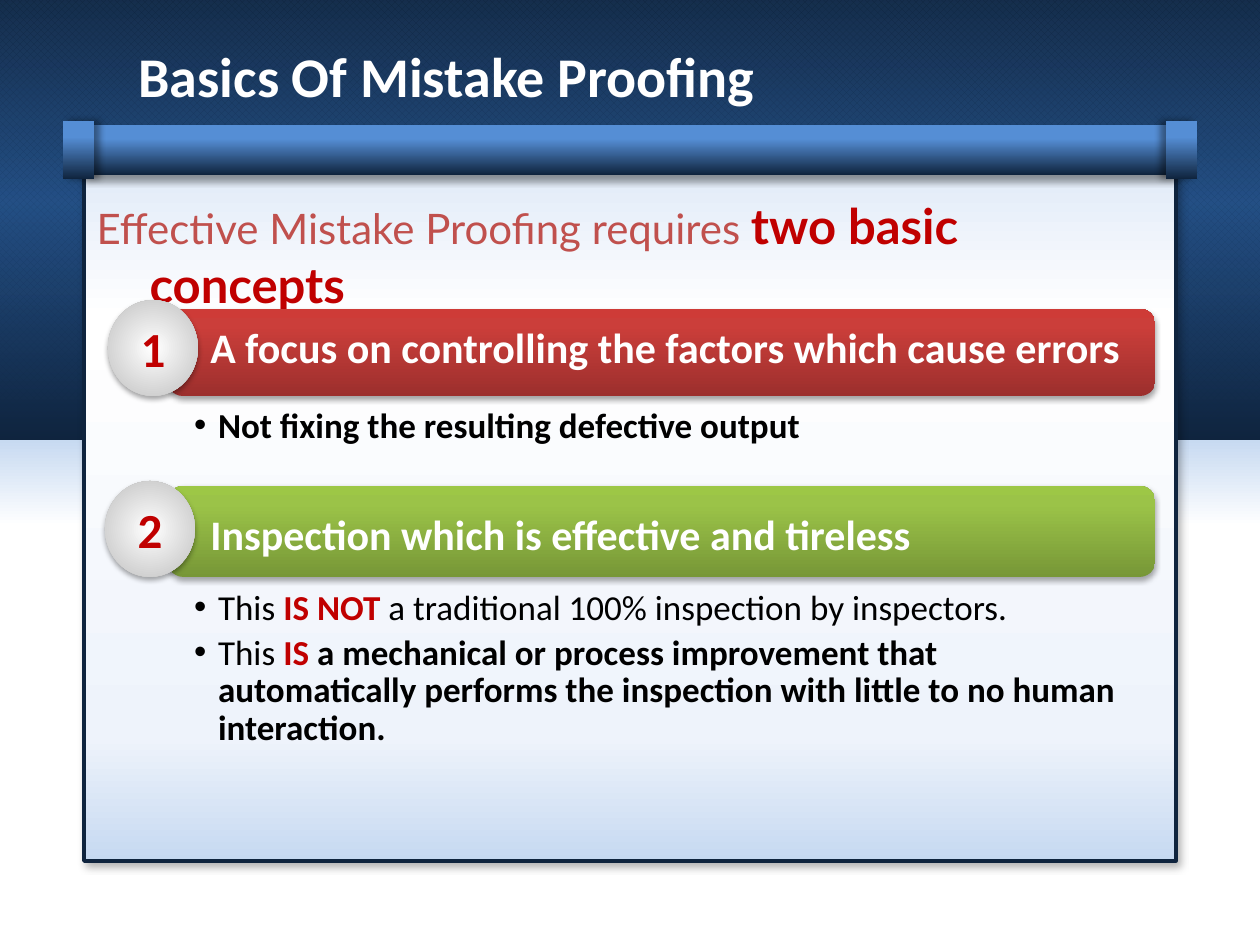
from dataclasses import dataclass
from typing import Optional

from lxml import etree
from pptx import Presentation
from pptx import util as u
from pptx.dml import color
from pptx.enum import shapes, text
from pptx.oxml import ns

EMU_PER_PX = 914400 / 126
COLORS = {
    "white": "FFFFFF", "black": "000000", "navy": "0F243E", "blue": "1F497D",
    "sky": "558ED5", "pale": "8EB4E3", "mist": "DAE6F6", "haze": "EEF3FB",
    "ice": "C6D9F1", "silver": "BFBFBF", "rose": "C0504D", "red": "C00000",
    "red_dark": "9C2F2D", "red_mid": "CB3E3A", "red_light": "CE3B37",
    "green_dark": "779737", "green_mid": "9BC348", "green_light": "9DC746",
}


@dataclass(frozen=True)
class Box:
    x: int
    y: int
    w: int
    h: int

    def emu(self) -> list[int]:
        return [px(v) for v in (self.x, self.y, self.w, self.h)]


@dataclass(frozen=True)
class Stop:
    at: int
    color: str
    alpha: int = 100


@dataclass(frozen=True)
class Shadow:
    alpha: int
    blur: float
    dist: float
    angle: int


@dataclass(frozen=True)
class Panel:
    box: Box
    stops: list[Stop]
    shadow: Optional[Shadow] = None
    kind: shapes.MSO_SHAPE = shapes.MSO_SHAPE.RECTANGLE
    angle: Optional[int] = 90


@dataclass(frozen=True)
class Span:
    text: str
    color: str = "black"
    bold: bool = False
    size: int = 20


@dataclass(frozen=True)
class Concept:
    number: str
    heading: str
    banner: Box
    badge: Box
    label: Box
    stops: list[Stop]
    points_idx: int
    points_box: Box
    points: list[list[Span]]


def px(value: float) -> int:
    return round(value * EMU_PER_PX)


def rgb(name: str) -> color.RGBColor:
    return color.RGBColor.from_string(COLORS[name])


def add(parent, tag: str, **attrs):
    return etree.SubElement(parent, ns.qn(tag), {k: str(v) for k, v in attrs.items()})


def set_gradient(sp, stops: list[Stop], angle: Optional[int]) -> None:
    sp.fill.gradient()
    grad = sp.element.spPr.find(ns.qn("a:gradFill"))
    for child in list(grad):
        grad.remove(child)
    gs_list = add(grad, "a:gsLst")
    for stop in stops:
        gs = add(gs_list, "a:gs", pos=stop.at * 1000)
        clr = add(gs, "a:srgbClr", val=COLORS[stop.color])
        if stop.alpha < 100:
            add(clr, "a:alpha", val=stop.alpha * 1000)
    if angle is None:
        circle = add(grad, "a:path", path="circle")
        add(circle, "a:fillToRect", l=50000, t=50000, r=50000, b=50000)
    else:
        add(grad, "a:lin", ang=angle * 60000, scaled=0)


def set_shadow(sp, shadow: Optional[Shadow]) -> None:
    sp.shadow.inherit = False
    if shadow:
        effects = sp.element.spPr.find(ns.qn("a:effectLst"))
        outer = add(effects, "a:outerShdw", blurRad=u.Pt(shadow.blur), dist=u.Pt(shadow.dist),
                    dir=shadow.angle * 60000, algn="ctr", rotWithShape=0)
        clr = add(outer, "a:srgbClr", val=COLORS["black"])
        add(clr, "a:alpha", val=shadow.alpha * 1000)


def draw_panel(s, panel: Panel):
    sp = s.shapes.add_shape(panel.kind, *panel.box.emu())
    set_gradient(sp, panel.stops, panel.angle)
    sp.line.fill.background()
    set_shadow(sp, panel.shadow)
    return sp


def place(s, ph, box: Box) -> None:
    ph.left, ph.top, ph.width, ph.height = box.emu()
    s.shapes.element.append(ph.element)
    ph.text_frame.word_wrap = True
    ph.text_frame.auto_size = text.MSO_AUTO_SIZE.NONE
    ph.text_frame.vertical_anchor = text.MSO_ANCHOR.TOP


def set_font(font, name: str, size: int, color_name: str, bold: bool) -> None:
    font.name, font.size, font.bold = name, u.Pt(size), bold
    font.color.rgb = rgb(color_name)


def write_spans(p, spans: list[Span], name: str, indent: int) -> None:
    p.font.name = name
    p.space_before = u.Pt(0)
    ppr = p._p.get_or_add_pPr()
    ppr.set("marL", str(px(indent)))
    ppr.set("indent", str(-px(indent)))
    for span in spans:
        r = p.add_run()
        r.text = span.text
        r.font.size, r.font.bold = u.Pt(span.size), span.bold
        r.font.color.rgb = rgb(span.color)


def write_label(tf, label: str, size: int, color_name: str) -> None:
    p = tf.paragraphs[0]
    p.text = label
    set_font(p.font, "Calibri", size, color_name, True)


def draw_background(s) -> None:
    sky = Box(-4, -1, 1265, 441)
    draw_panel(s, Panel(Box(-1, 357, 1264, 583),
                        [Stop(0, "pale"), Stop(29, "white"), Stop(100, "white")]))
    weave = s.shapes.add_shape(shapes.MSO_SHAPE.RECTANGLE, *sky.emu())
    weave.fill.patterned()
    weave.fill.fore_color.rgb, weave.fill.back_color.rgb = rgb("navy"), rgb("sky")
    weave.element.spPr.find(ns.qn("a:pattFill")).set("prst", "openDmnd")
    weave.line.fill.background()
    set_shadow(weave, None)
    draw_panel(s, Panel(sky, [Stop(0, "navy", 90), Stop(46, "blue", 90), Stop(100, "navy")]))
    sheet = draw_panel(s, Panel(
        Box(84, 136, 1092, 725),
        [Stop(0, "mist"), Stop(25, "white"), Stop(83, "haze"), Stop(100, "ice")],
        Shadow(30, 4.5, 2.6, 53)))
    sheet.line.color.rgb, sheet.line.width = rgb("navy"), u.Pt(2)
    metal = [Stop(28, "sky"), Stop(100, "navy")]
    for box, angle in ((Box(84, 125, 1092, 50), 90), (Box(63, 121, 31, 58), 0),
                       (Box(1166, 121, 31, 58), 180)):
        draw_panel(s, Panel(box, metal, Shadow(40, 4, 3, angle)))


def draw_concept(s, concept: Concept) -> None:
    shadow = Shadow(35, 3.1, 1.8, 90)
    draw_panel(s, Panel(concept.banner, concept.stops, shadow,
                        shapes.MSO_SHAPE.ROUNDED_RECTANGLE, 270))
    badge = draw_panel(s, Panel(concept.badge, [Stop(0, "white"), Stop(100, "silver")], shadow,
                                shapes.MSO_SHAPE.OVAL, None))
    tf = badge.text_frame
    tf.margin_left = tf.margin_right = tf.margin_top = tf.margin_bottom = 0
    write_label(tf, concept.number, 28, "red")
    label = s.shapes.add_textbox(*concept.label.emu())
    label.text_frame.word_wrap = False
    write_label(label.text_frame, concept.heading, 24, "white")

    ph = s.placeholders[concept.points_idx]
    place(s, ph, concept.points_box)
    tf = ph.text_frame
    tf.margin_left, tf.margin_right = px(26), px(23)
    tf.margin_top = tf.margin_bottom = px(4)
    for i, spans in enumerate(concept.points):
        p = tf.add_paragraph() if i else tf.paragraphs[0]
        write_spans(p, spans, "Calibri", 24)
        p.line_spacing, p.space_after = 0.9, u.Pt(4)


CONCEPTS = [
    Concept("1", "A focus on controlling the factors which cause errors",
            Box(168, 309, 987, 87), Box(108, 300, 90, 96), Box(198, 315, 944, 63),
            [Stop(0, "red_dark"), Stop(80, "red_mid"), Stop(100, "red_light")],
            2, Box(168, 404, 840, 68),
            [[Span("Not fixing the resulting defective output", bold=True)]]),
    Concept("2", "Inspection which is effective and tireless",
            Box(168, 486, 987, 91), Box(105, 481, 90, 96), Box(198, 502, 736, 63),
            [Stop(0, "green_dark"), Stop(80, "green_mid"), Stop(100, "green_light")],
            4, Box(168, 586, 987, 244),
            [[Span("This "), Span("IS NOT ", "red", True),
              Span("a traditional 100% inspection by inspectors.")],
             [Span("This "), Span("IS ", "red", True),
              Span("a mechanical or process improvement that automatically performs "
                   "the inspection with little to no human interaction.", bold=True)]]),
]


def main() -> None:
    prs = Presentation()
    prs.slide_width, prs.slide_height = px(1260), px(945)
    s = prs.slides.add_slide(prs.slide_layouts.get_by_name("Comparison"))
    spare = s.placeholders[3].element
    spare.getparent().remove(spare)
    draw_background(s)

    title = s.shapes.title
    place(s, title, Box(126, 44, 1134, 71))
    title.text_frame.vertical_anchor = text.MSO_ANCHOR.BOTTOM
    write_label(title.text_frame, "Basics Of Mistake Proofing", 32, "white")
    p = title.text_frame.paragraphs[0]
    p.alignment, p.line_spacing = text.PP_ALIGN.LEFT, 0.8

    intro = s.placeholders[1]
    place(s, intro, Box(84, 189, 1087, 84))
    write_spans(intro.text_frame.paragraphs[0],
                [Span("Effective Mistake Proofing requires ", "rose", size=24),
                 Span("two basic concepts", "red", True, 28)], "Lato", 53)

    for concept in CONCEPTS:
        draw_concept(s, concept)
    prs.save("out.pptx")


if __name__ == "__main__":
    main()
